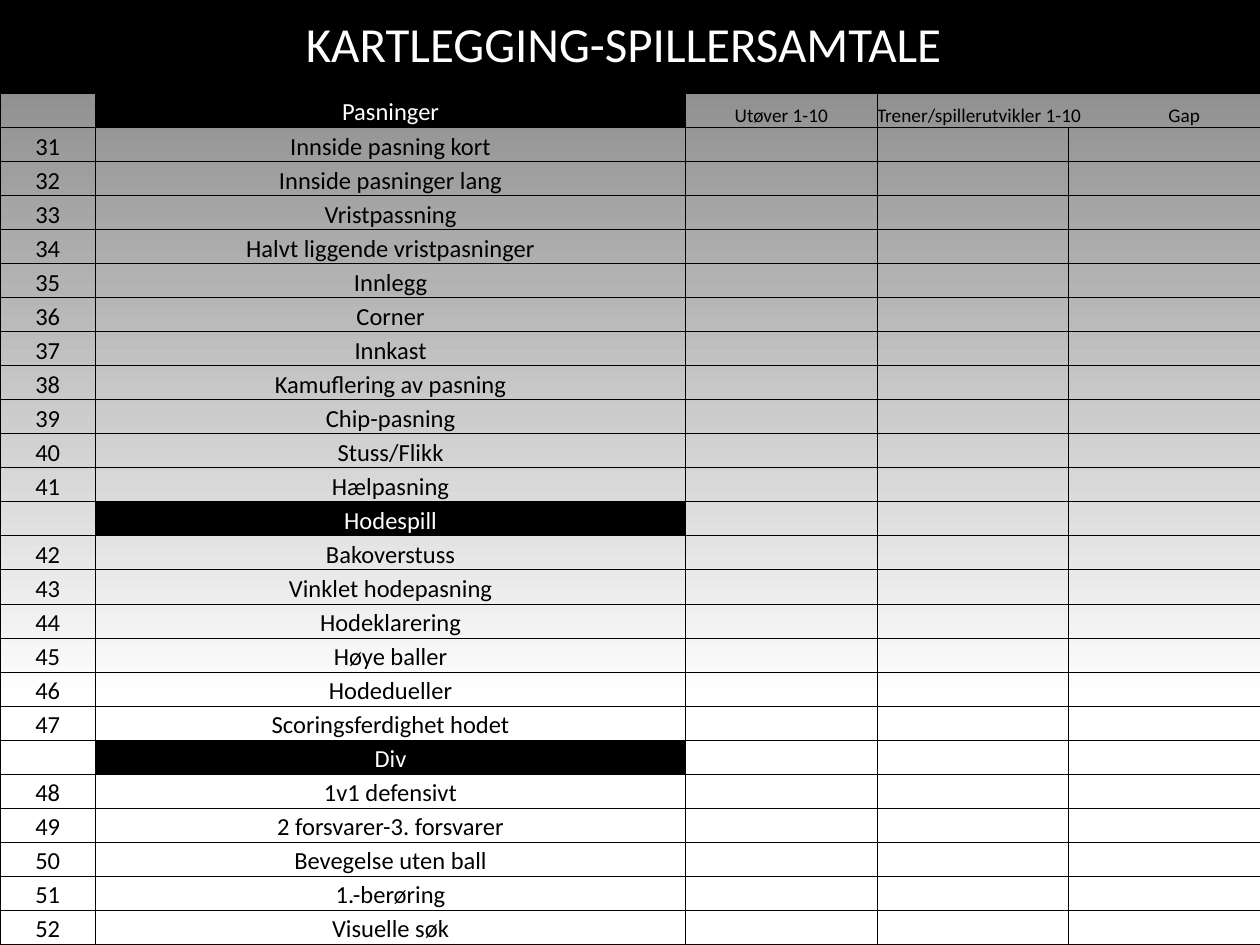
from lxml.etree import SubElement
from pptx import Presentation
from pptx.dml.color import RGBColor
from pptx.enum.shapes import MSO_SHAPE
from pptx.enum.text import MSO_ANCHOR, PP_ALIGN
from pptx.oxml.ns import qn
from pptx.util import Pt

TITLE = "KARTLEGGING-SPILLERSAMTALE"
SCORE_HEADINGS = ("Utøver 1-10", "Trener/spillerutvikler 1-10\tGap")
FIRST_NUMBER = 31
SECTIONS = {
    "Pasninger": (
        "Innside pasning kort", "Innside pasninger lang", "Vristpassning",
        "Halvt liggende vristpasninger", "Innlegg", "Corner", "Innkast",
        "Kamuflering av pasning", "Chip-pasning", "Stuss/Flikk", "Hælpasning",
    ),
    "Hodespill": (
        "Bakoverstuss", "Vinklet hodepasning", "Hodeklarering",
        "Høye baller", "Hodedueller", "Scoringsferdighet hodet",
    ),
    "Div": (
        "1v1 defensivt", "2 forsvarer-3. forsvarer", "Bevegelse uten ball",
        "1.-berøring", "Visuelle søk",
    ),
}

BLACK = RGBColor(0x00, 0x00, 0x00)
WHITE = RGBColor(0xFF, 0xFF, 0xFF)
GREY = RGBColor(0x80, 0x80, 0x80)
FONT = "Calibri"
SLIDE_WIDTH, SLIDE_HEIGHT = 720, 540
TABLE_TOP = 53.4
COLUMN_WIDTHS = (54.6, 337.2, 109.4, 109.4, 109.4)
TEXT_SIZE, HEADING_SIZE, TITLE_SIZE = 14, 11, 28
GAP_TAB = 166.5


def format_runs(paragraph, size, color):
    for run in paragraph.runs:
        run.font.name = FONT
        run.font.size = Pt(size)
        run.font.color.rgb = color


def add_borders(cell):
    properties = cell._tc.get_or_add_tcPr()
    for position, side in enumerate(("lnL", "lnR", "lnT", "lnB")):
        line = properties.makeelement(qn(f"a:{side}"), {"w": str(Pt(0.5))})
        fill = SubElement(line, qn("a:solidFill"))
        SubElement(fill, qn("a:srgbClr"), val=str(BLACK))
        properties.insert(position, line)


def prepare_cell(cell):
    """Clear the style's look and keep an empty cell from stretching its row."""
    cell.margin_left = cell.margin_right = cell.margin_top = Pt(0.5)
    cell.margin_bottom = 0
    cell.vertical_anchor = MSO_ANCHOR.BOTTOM
    cell.fill.background()
    add_borders(cell)
    paragraph = cell.text_frame.paragraphs[0]
    SubElement(paragraph._p, qn("a:endParaRPr"), sz=str(HEADING_SIZE * 100))


def write_cell(cell, text, size=TEXT_SIZE, color=BLACK):
    paragraph = cell.text_frame.paragraphs[0]
    paragraph.text = text
    paragraph.alignment = PP_ALIGN.CENTER
    format_runs(paragraph, size, color)


def add_title(slide):
    overhang = 26.6
    bar = slide.shapes.add_shape(
        MSO_SHAPE.RECTANGLE, 0, Pt(-overhang),
        Pt(SLIDE_WIDTH), Pt(TABLE_TOP + overhang))
    bar.shadow.inherit = False
    bar.fill.solid()
    bar.fill.fore_color.rgb = BLACK
    bar.line.fill.background()
    frame = bar.text_frame
    frame.word_wrap = True
    frame.vertical_anchor = MSO_ANCHOR.MIDDLE
    frame.margin_top, frame.margin_bottom = Pt(overhang), 0
    frame.margin_right = Pt(14.6)
    frame.text = TITLE
    paragraph = frame.paragraphs[0]
    paragraph.alignment = PP_ALIGN.CENTER
    paragraph.line_spacing = 0.9
    format_runs(paragraph, TITLE_SIZE, WHITE)


def add_score_headings(table):
    player, coach = table.cell(0, 2), table.cell(0, 3)
    coach.merge(table.cell(0, 4))
    for cell, heading in zip((player, coach), SCORE_HEADINGS):
        cell.margin_left = cell.margin_right = 0
        write_cell(cell, heading, HEADING_SIZE)
    paragraph = coach.text_frame.paragraphs[0]
    paragraph.alignment = PP_ALIGN.LEFT
    tabs = SubElement(paragraph._p.get_or_add_pPr(), qn("a:tabLst"))
    SubElement(tabs, qn("a:tab"), pos=str(Pt(GAP_TAB)), algn="l")


def add_skill_table(slide):
    row_count = sum(1 + len(skills) for skills in SECTIONS.values())
    height = SLIDE_HEIGHT - TABLE_TOP
    table = slide.shapes.add_table(
        row_count, len(COLUMN_WIDTHS), 0, Pt(TABLE_TOP),
        Pt(SLIDE_WIDTH), Pt(height)).table
    table.first_row = table.horz_banding = False
    for column, width in zip(table.columns, COLUMN_WIDTHS):
        column.width = Pt(width)
    for row in table.rows:
        row.height = Pt(height / row_count)
    for cell in table.iter_cells():
        prepare_cell(cell)

    row, number = 0, FIRST_NUMBER
    for section, skills in SECTIONS.items():
        heading = table.cell(row, 1)
        heading.fill.solid()
        heading.fill.fore_color.rgb = BLACK
        write_cell(heading, section, color=WHITE)
        row += 1
        for skill in skills:
            write_cell(table.cell(row, 0), str(number))
            write_cell(table.cell(row, 1), skill)
            row += 1
            number += 1
    add_score_headings(table)


def main():
    presentation = Presentation()
    presentation.slide_width = Pt(SLIDE_WIDTH)
    presentation.slide_height = Pt(SLIDE_HEIGHT)
    slide = presentation.slides.add_slide(presentation.slide_layouts[6])
    background = slide.background.fill
    background.gradient()
    background.gradient_angle = 270
    for stop, position, color in zip(
            background.gradient_stops, (0, 0.74), (GREY, WHITE)):
        stop.position = position
        stop.color.rgb = color
    add_title(slide)
    add_skill_table(slide)
    presentation.save("out.pptx")


if __name__ == "__main__":
    main()
